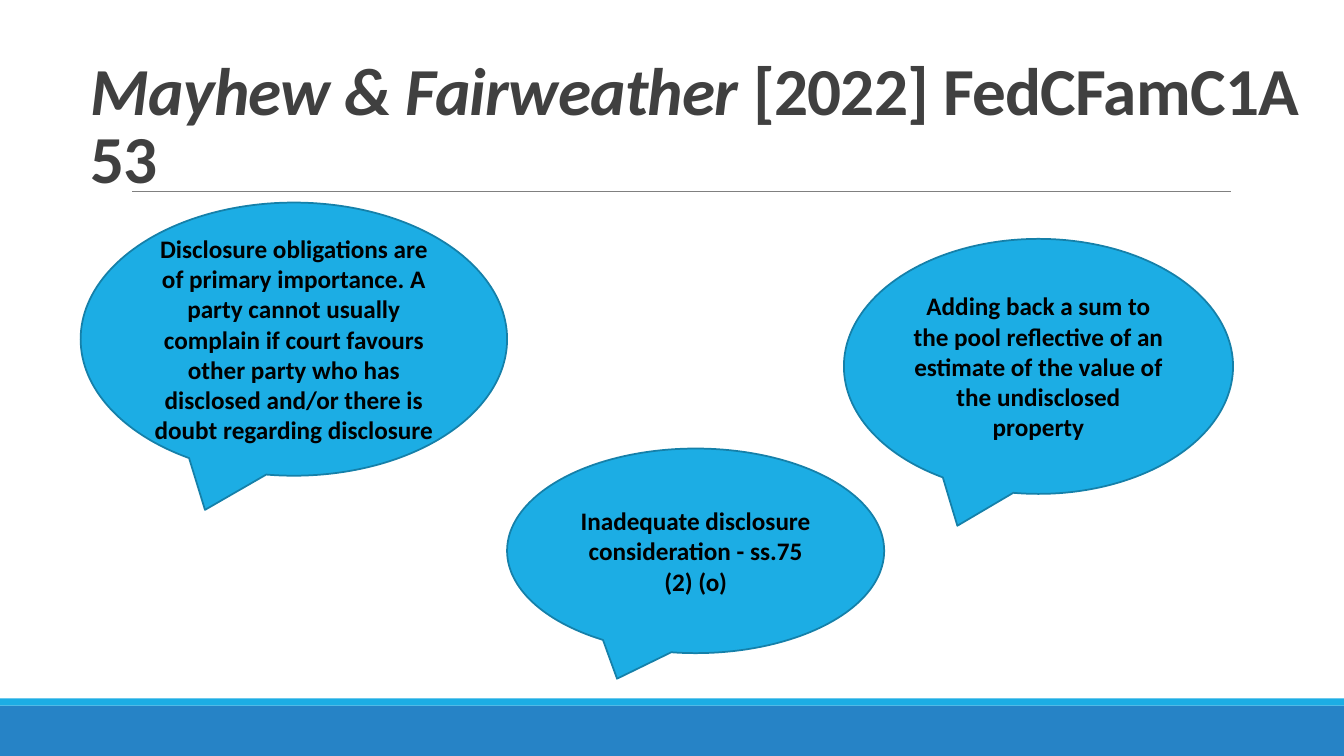
from dataclasses import dataclass

from lxml import etree
from pptx import Presentation
from pptx.dml.color import RGBColor
from pptx.enum.shapes import MSO_CONNECTOR, MSO_SHAPE
from pptx.enum.text import MSO_ANCHOR, PP_ALIGN
from pptx.oxml.ns import qn
from pptx.util import Pt

PX = 9144
WIDTH, HEIGHT = 1333, 750
RECTANGLE, CALLOUT = MSO_SHAPE.RECTANGLE, MSO_SHAPE.OVAL_CALLOUT
STRAIGHT = MSO_CONNECTOR.STRAIGHT
BOTTOM, MIDDLE = MSO_ANCHOR.BOTTOM, MSO_ANCHOR.MIDDLE
LEFT, CENTER = PP_ALIGN.LEFT, PP_ALIGN.CENTER


@dataclass(frozen=True)
class Theme:
    """Colours, font and type sizes of the deck."""
    font: str = "Calibri"
    title_size: int = 48
    callout_size: int = 18
    title: str = "404040"
    text: str = "000000"
    rule: str = "808080"
    bubble: str = "1CADE4"
    outline: str = "1580A9"
    footer: str = "2683C6"


THEME = Theme()
CALLOUTS = [
    ((80, 201, 423, 271),
     "Disclosure obligations are of primary importance. A party cannot usually complain if "
     "court favours other party who has disclosed and/or there is doubt regarding disclosure"),
    ((837, 237, 386, 253),
     "Adding back a sum to the pool reflective of an estimate of the value of the "
     "undisclosed property"),
    ((503, 445, 374, 203), "Inadequate disclosure consideration - ss.75 (2) (o)"),
]


def emu(box):
    """Turn px lengths into EMU."""
    return [length * PX for length in box]


def color(value):
    """Return the colour for a hex value."""
    return RGBColor.from_string(value)


def add_span(para, text, *, size, fill, italic=False, spacing=0):
    """Add one bold span to a paragraph."""
    span = para.add_run()
    span.text = text
    font = span.font
    font.name, font.size, font.bold, font.italic = THEME.font, Pt(size), True, italic
    font.color.rgb = color(fill)
    if spacing:
        font._element.set("spc", str(spacing))


def set_frame(shape, anchor, align):
    """Wrap and align the text of a shape and return its paragraph."""
    frame = shape.text_frame
    frame.word_wrap = True
    frame.vertical_anchor = anchor
    para = frame.paragraphs[0]
    para.alignment = align
    return para


def add_filled(page, kind, box, fill, outline=None):
    """Add a filled preset shape with an optional outline."""
    shape = page.shapes.add_shape(kind, *emu(box))
    shape.shadow.inherit = False
    shape.fill.solid()
    shape.fill.fore_color.rgb = color(fill)
    if outline:
        shape.line.color.rgb = color(outline)
        shape.line.width = Pt(1.25)
    else:
        shape.line.fill.background()
    return shape


def add_footer(page, box):
    """Draw the footer band with its thin stripe on top."""
    left, top, width, height = box
    stripe = 7
    add_filled(page, RECTANGLE, (left, top + stripe, width, height - stripe), THEME.footer)
    add_filled(page, RECTANGLE, (left, top, width, stripe), THEME.bubble)


def add_title(page, box):
    """Draw the case title and the rule behind its last line."""
    left, top, width, height = box
    rule_top = top + height - 11
    rule = page.shapes.add_connector(
        STRAIGHT, *emu((left + 51, rule_top, left + 1141, rule_top)))
    rule.line.color.rgb = color(THEME.rule)
    rule.line.width = Pt(0.5)
    etree.SubElement(rule._element.spPr, qn("a:effectLst"))
    para = set_frame(page.shapes.add_textbox(*emu(box)), BOTTOM, LEFT)
    para.line_spacing = 0.85
    style = {"size": THEME.title_size, "fill": THEME.title, "spacing": -50}
    add_span(para, "Mayhew & Fairweather ", italic=True, **style)
    add_span(para, "[2022] FedCFamC1A 53", **style)


def add_callout(page, box, text):
    """Draw one speech bubble with centred text."""
    bubble = add_filled(page, CALLOUT, box, THEME.bubble, THEME.outline)
    para = set_frame(bubble, MIDDLE, CENTER)
    add_span(para, text, size=THEME.callout_size, fill=THEME.text)


def main():
    """Build and save the deck."""
    deck = Presentation()
    deck.slide_width, deck.slide_height = emu((WIDTH, HEIGHT))
    page = deck.slides.add_slide(deck.slide_layouts[6])
    add_footer(page, (0, 693, WIDTH, HEIGHT - 693))
    add_title(page, (80, 42, WIDTH - 80, 159))
    for box, text in CALLOUTS:
        add_callout(page, box, text)
    deck.save("out.pptx")


if __name__ == "__main__":
    main()
